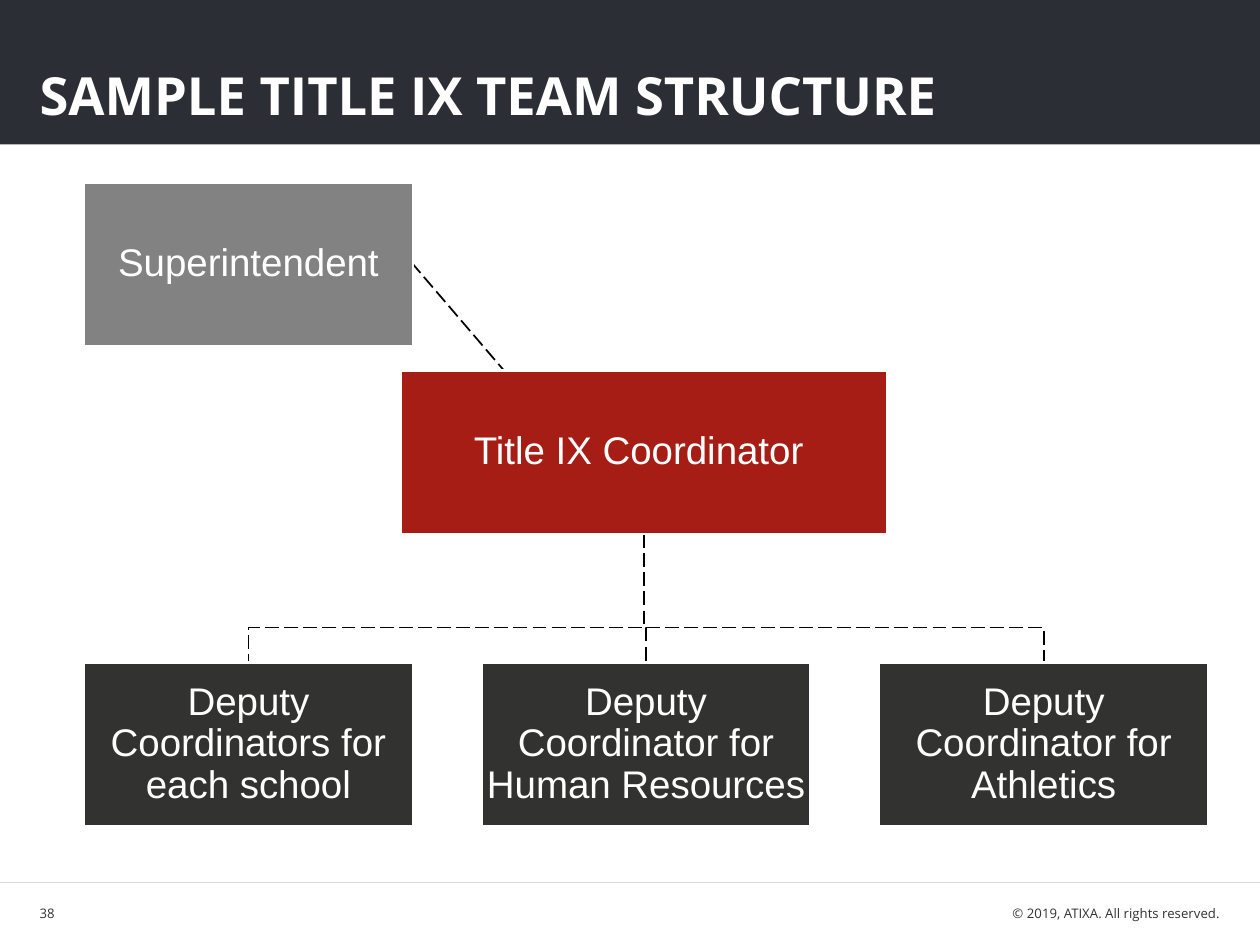
"""Build the Title IX team structure slide."""
import pptx
import pptx.dml.color
import pptx.enum.dml
import pptx.enum.shapes
import pptx.enum.text
import pptx.oxml.ns
import pptx.util
from lxml import etree

Pt = pptx.util.Pt
RGB = pptx.dml.color.RGBColor.from_string
Align = pptx.enum.text.PP_ALIGN
Anchor = pptx.enum.text.MSO_ANCHOR
RECTANGLE = pptx.enum.shapes.MSO_SHAPE.RECTANGLE
STRAIGHT = pptx.enum.shapes.MSO_CONNECTOR.STRAIGHT

THEME = {
    "band": "2B2E35", "white": "FFFFFF", "dark": "323331", "red": "A61D16",
    "gray": "828282", "rule": "D9D9D9", "link": "000000",
    "heading": "Open Sans", "body": "Arial",
    "title_size": 30, "box_size": 22, "footer_size": 7.5,
}


def write(shape, text, font, size, color, align, anchor, inset=0, spacing=1.0, bold=False):
    frame = shape.text_frame
    frame.text = text
    frame.word_wrap = True
    frame.auto_size = pptx.enum.text.MSO_AUTO_SIZE.NONE
    frame.vertical_anchor = anchor
    frame.margin_left = frame.margin_right = Pt(inset)
    frame.margin_top = frame.margin_bottom = Pt(inset)
    para = frame.paragraphs[0]
    para.alignment = align
    para.line_spacing = spacing
    span = para.runs[0]
    span.font.name = THEME[font]
    span.font.size = Pt(THEME[size])
    span.font.bold = bold
    span.font.color.rgb = RGB(THEME[color])


def style_line(shape, color, width, dash=None):
    shape.line.color.rgb = RGB(THEME[color])
    shape.line.width = Pt(width)
    if dash:
        shape.line.dash_style = dash
    properties = shape.element.spPr
    if properties.find(pptx.oxml.ns.qn("a:effectLst")) is None:
        etree.SubElement(properties, pptx.oxml.ns.qn("a:effectLst"))


deck = pptx.Presentation()
deck.slide_width, deck.slide_height = Pt(720), Pt(540)
slide = deck.slides.add_slide(deck.slide_layouts[5])
shapes = slide.shapes

title = shapes.title
title.left, title.top, title.width, title.height = Pt(22.6), Pt(18), Pt(603.4), Pt(54)
write(title, "SAMPLE TITLE IX TEAM STRUCTURE", "heading", "title_size", "white",
      Align.LEFT, Anchor.BOTTOM, spacing=0.8, bold=True)

band = shapes.add_shape(RECTANGLE, 0, 0, Pt(720), Pt(82.5))
band.shadow.inherit = False
band.fill.solid()
band.fill.fore_color.rgb = RGB(THEME["band"])
band.line.fill.background()
title.element.addprevious(band.element)

footer_rule = shapes.add_connector(STRAIGHT, 0, Pt(504), Pt(720), Pt(504))
style_line(footer_rule, "rule", 0.5)
for text, left, width, align in (
    ("38", 22.7, 14.4, Align.LEFT),
    ("© 2019, ATIXA. All rights reserved.", 530.6, 166.4, Align.RIGHT),
):
    footer = shapes.add_textbox(Pt(left), Pt(504), Pt(width), Pt(36))
    write(footer, text, "heading", "footer_size", "dark", align, Anchor.MIDDLE)

BOX_WIDTH, BOX_HEIGHT = 188, 93.6
LEFT, PITCH = 48, 227.2
TOP_SUPERINTENDENT, TOP_COORDINATOR, TOP_DEPUTIES = 104.2, 211.6, 378.6
COORDINATOR_LEFT, COORDINATOR_WIDTH = 229, 278
CENTER = COORDINATOR_LEFT + COORDINATOR_WIDTH / 2
COORDINATOR_BOTTOM = TOP_COORDINATOR + BOX_HEIGHT
BRANCH = 358.6
LONG_DASH = pptx.enum.dml.MSO_LINE.LONG_DASH

superintendent_link = shapes.add_connector(
    STRAIGHT, Pt(CENTER), Pt(COORDINATOR_BOTTOM),
    Pt(LEFT + BOX_WIDTH), Pt(TOP_SUPERINTENDENT + BOX_HEIGHT / 2))
style_line(superintendent_link, "link", 1, LONG_DASH)

deputies = (
    "Deputy Coordinators for each school",
    "Deputy Coordinator for Human Resources",
    "Deputy Coordinator for Athletics",
)
boxes = [
    ("Title IX Coordinator ", COORDINATOR_LEFT, TOP_COORDINATOR, COORDINATOR_WIDTH, "red"),
    ("Superintendent", LEFT, TOP_SUPERINTENDENT, BOX_WIDTH, "gray"),
]
for column, deputy in enumerate(deputies):
    left = LEFT + column * PITCH
    middle = left + BOX_WIDTH / 2
    boxes.append((deputy, left, TOP_DEPUTIES, BOX_WIDTH, "dark"))
    outline = shapes.build_freeform(Pt(CENTER), Pt(COORDINATOR_BOTTOM))
    corners = ((CENTER, BRANCH), (middle, BRANCH), (middle, TOP_DEPUTIES))
    outline.add_line_segments([(Pt(x), Pt(y)) for x, y in corners], close=False)
    branch = outline.convert_to_shape()
    branch.shadow.inherit = False
    branch.fill.background()
    style_line(branch, "link", 1, LONG_DASH)

for text, left, top, width, color in boxes:
    box = shapes.add_shape(RECTANGLE, Pt(left), Pt(top), Pt(width), Pt(BOX_HEIGHT))
    box.shadow.inherit = False
    box.fill.solid()
    box.fill.fore_color.rgb = RGB(THEME[color])
    style_line(box, "white", 1.5)
    write(box, text, "body", "box_size", "white", Align.CENTER, Anchor.MIDDLE,
          inset=1.1, spacing=0.9)

deck.save("out.pptx")
